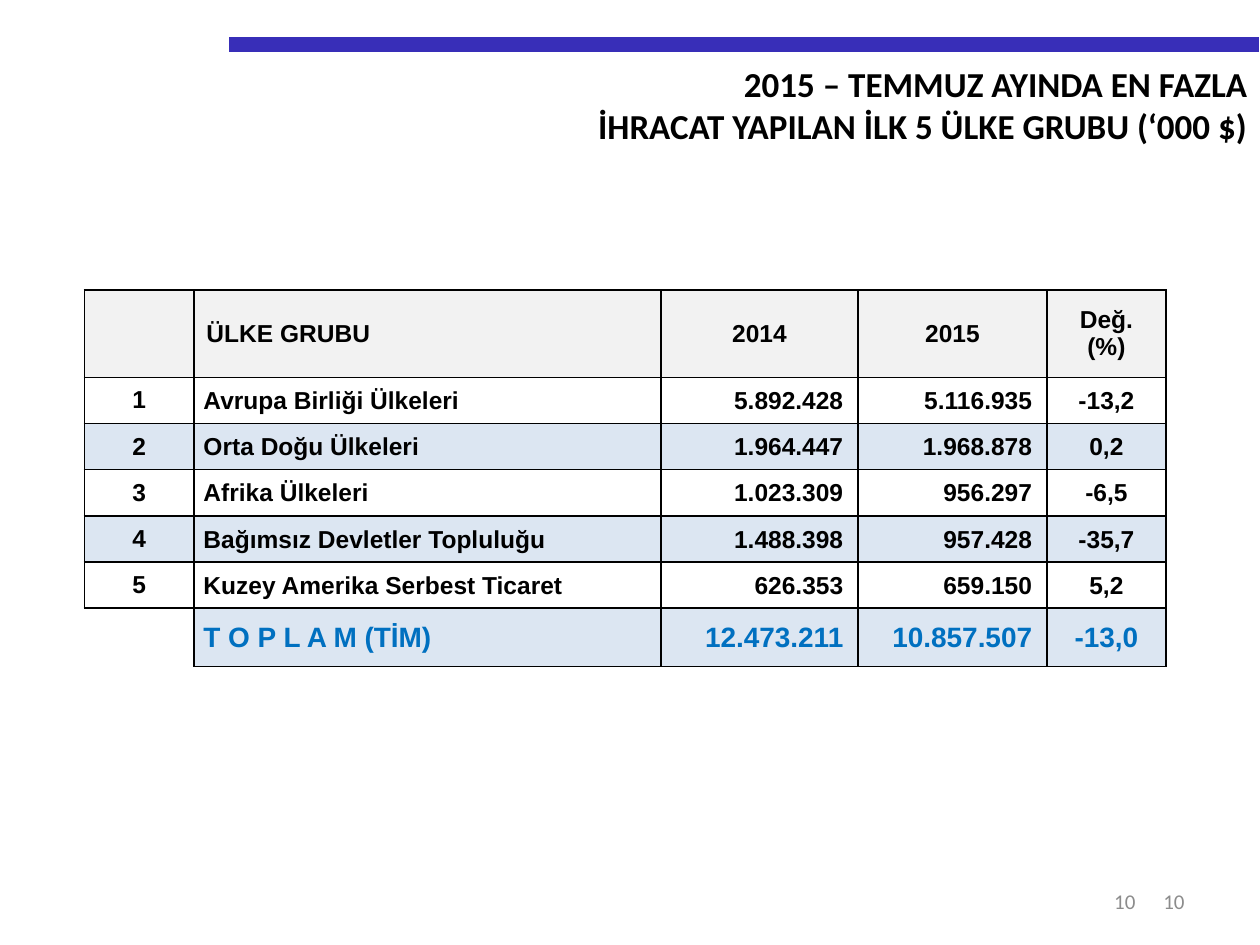
"""Builds a slide with a table of exports to the top five country groups."""
from lxml.etree import SubElement
from pptx import Presentation
from pptx.dml.color import RGBColor
from pptx.enum.shapes import MSO_CONNECTOR
from pptx.enum.text import MSO_ANCHOR as Anchor, PP_ALIGN as Align
from pptx.oxml.ns import qn
from pptx.util import Pt

BLACK = RGBColor(0x00, 0x00, 0x00)
GRAY = RGBColor(0x8C, 0x8C, 0x8C)
INDIGO = RGBColor(0x38, 0x2E, 0xB8)
BLUE = RGBColor(0x00, 0x70, 0xC0)
HEADER_FILL = RGBColor(0xF2, 0xF2, 0xF2)
BAND_FILL = RGBColor(0xDC, 0xE6, 0xF2)

TITLE = "2015 – TEMMUZ AYINDA EN FAZLA\nİHRACAT YAPILAN İLK 5 ÜLKE GRUBU (‘000 $)"
PAGE_NUMBER = "10"
PAGE_NUMBER_BOXES = [(516.24, 167.76), (504.72, 151.2)]
ROWS = [
    ("", "ÜLKE GRUBU", "2014", "2015", "Değ.\n(%)"),
    ("1", "Avrupa Birliği Ülkeleri", "5.892.428", "5.116.935", "-13,2"),
    ("2", "Orta Doğu Ülkeleri", "1.964.447", "1.968.878", "0,2"),
    ("3", "Afrika Ülkeleri", "1.023.309", "956.297", "-6,5"),
    ("4", "Bağımsız Devletler Topluluğu", "1.488.398", "957.428", "-35,7"),
    ("5", "Kuzey Amerika Serbest Ticaret", "626.353", "659.150", "5,2"),
    ("", "T O P L A M (TİM)", "12.473.211", "10.857.507", "-13,0"),
]
COLUMN_WIDTHS = [62.6, 266.8, 112.8, 107.9, 68]
ROW_HEIGHTS = [50] + [26.4] * 5 + [33.4]
COLUMN_ALIGNMENTS = [Align.CENTER, Align.LEFT, Align.RIGHT, Align.RIGHT, Align.CENTER]
COLUMN_MARGINS = [(7.2, 7.2), (5.5, 0.7), (0.7, 8.5), (0.7, 8.5), (0.7, 0.7)]
LAST_ROW = len(ROWS) - 1


def style_text(frame, alignment, size, font_name, color, bold):
    for paragraph in frame.paragraphs:
        paragraph.alignment = alignment
        font = paragraph.font
        font.size, font.name, font.bold = Pt(size), font_name, bold
        font.color.rgb = color


def add_text(slide, text, box, anchor, size, color, bold=False):
    frame = slide.shapes.add_textbox(*map(Pt, box)).text_frame
    frame.word_wrap = True
    frame.vertical_anchor = anchor
    frame.text = text
    style_text(frame, Align.RIGHT, size, "Calibri", color, bold)


def set_borders(cell, visible_sides):
    properties = cell._tc.get_or_add_tcPr()
    for side in "LRTB":
        line = SubElement(properties, qn(f"a:ln{side}"), w=str(Pt(1)))
        if side in visible_sides:
            fill = SubElement(line, qn("a:solidFill"))
            SubElement(fill, qn("a:srgbClr"), val=str(BLACK))
        else:
            SubElement(line, qn("a:noFill"))


def fill_cell(cell, text, row, column):
    is_header, is_total = row == 0, row == LAST_ROW
    is_blank_corner = is_total and column == 0
    set_borders(cell, "TR" if is_blank_corner else "LRTB")
    if is_blank_corner or row % 2:
        cell.fill.background()
    else:
        cell.fill.solid()
        cell.fill.fore_color.rgb = HEADER_FILL if is_header else BAND_FILL
    cell.vertical_anchor = Anchor.MIDDLE
    if not is_header and column > 0:
        left, right = COLUMN_MARGINS[column]
        cell.margin_left, cell.margin_right = Pt(left), Pt(right)
        cell.margin_top, cell.margin_bottom = Pt(0.7), Pt(0)
    if text:
        cell.text = text
        alignment = COLUMN_ALIGNMENTS[column]
        if is_header and column > 1:
            alignment = Align.CENTER
        style_text(cell.text_frame, alignment, 16 if is_total else 14, "Arial",
                   BLUE if is_total else BLACK, True)


def add_export_table(slide):
    box = (48.2, 165.6, sum(COLUMN_WIDTHS), sum(ROW_HEIGHTS))
    table = slide.shapes.add_table(len(ROWS), len(COLUMN_WIDTHS), *map(Pt, box)).table
    table.first_row = table.horz_banding = False
    for column, width in zip(table.columns, COLUMN_WIDTHS):
        column.width = Pt(width)
    for row, height in zip(table.rows, ROW_HEIGHTS):
        row.height = Pt(height)
    for row, texts in enumerate(ROWS):
        for column, text in enumerate(texts):
            fill_cell(table.cell(row, column), text, row, column)


def add_top_rule(slide):
    ends = map(Pt, (131, 25.4, 719.5, 25.4))
    rule = slide.shapes.add_connector(MSO_CONNECTOR.STRAIGHT, *ends)
    rule.line.color.rgb = INDIGO
    rule.line.width = Pt(8.5)
    SubElement(rule._element.spPr, qn("a:effectLst"))


def main():
    presentation = Presentation()
    presentation.slide_width, presentation.slide_height = Pt(720), Pt(540)
    slide = presentation.slides.add_slide(presentation.slide_layouts[6])
    add_top_rule(slide)
    for left, width in PAGE_NUMBER_BOXES:
        add_text(slide, PAGE_NUMBER, (left, 500.5, width, 28.8), Anchor.MIDDLE, 12, GRAY)
    add_text(slide, TITLE, (76.3, 32.4, 643.7, 55.4), Anchor.TOP, 20, BLACK, True)
    add_export_table(slide)
    presentation.save("out.pptx")


if __name__ == "__main__":
    main()
